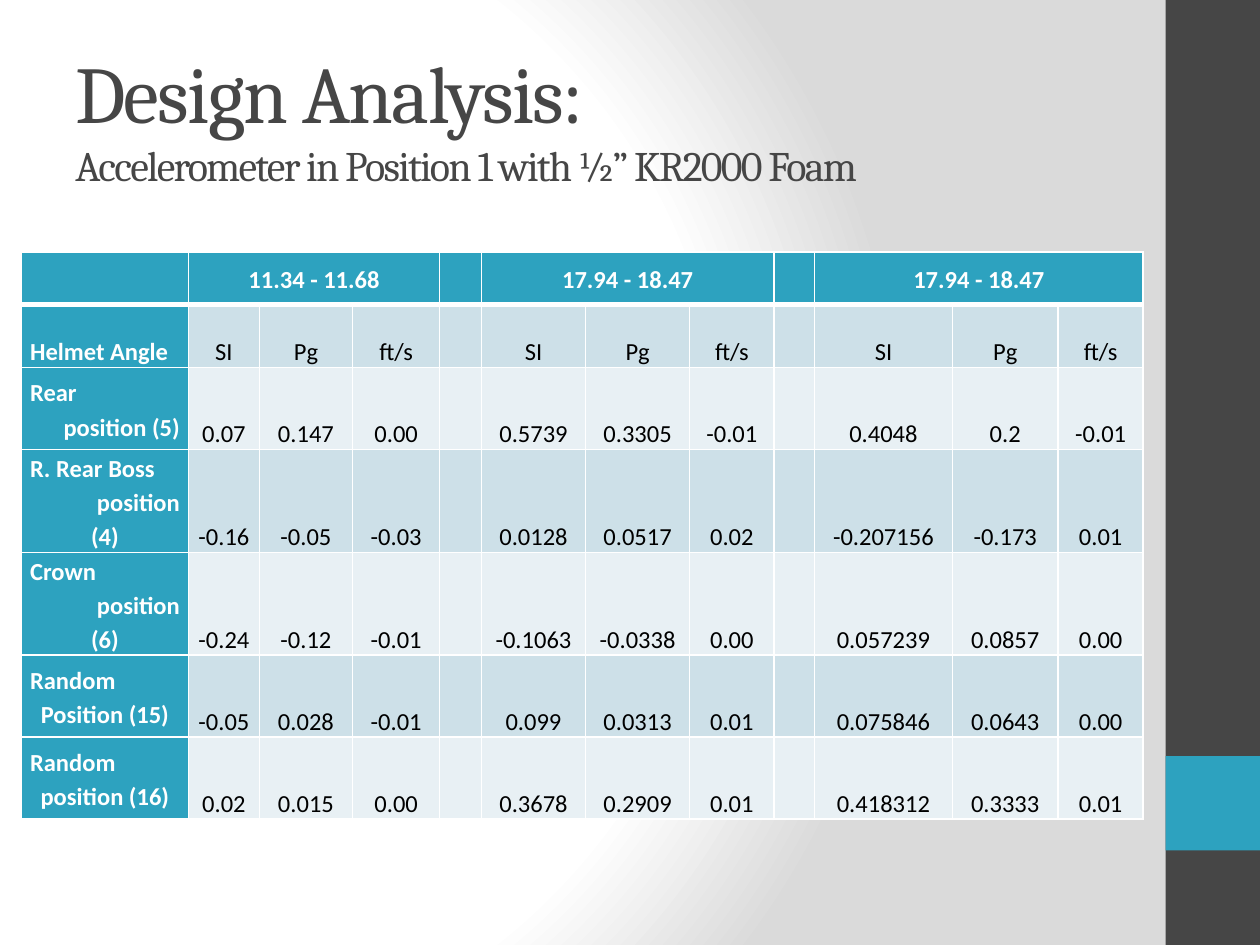
"""Build the accelerometer design analysis slide with its results table."""
from pptx import Presentation
from pptx.dml.color import RGBColor
from pptx.enum.shapes import MSO_SHAPE as Shape
from pptx.enum.text import MSO_ANCHOR as Anchor, PP_ALIGN as Align
from pptx.oxml import parse_xml
from pptx.oxml.ns import nsdecls
from pptx.util import Pt

CHARCOAL = RGBColor(0x46, 0x46, 0x46)
TEAL = RGBColor(0x2D, 0xA2, 0xBF)
BAND_DARK = RGBColor(0xCD, 0xE0, 0xE8)
BAND_LIGHT = RGBColor(0xE8, 0xF0, 0xF4)
WHITE = RGBColor(0xFF, 0xFF, 0xFF)
BLACK = RGBColor(0, 0, 0)
GREY = RGBColor(0xDA, 0xDA, 0xDA)


def write(para, text, font="Calibri", size=14, color=BLACK, bold=False,
          align=Align.LEFT, line=1.0, spacing=0):
    span = para.add_run()
    span.text = text
    span.font.name = font
    span.font.size = Pt(size)
    span.font.color.rgb = color
    span.font.bold = bold
    if spacing:
        span.font._element.set("spc", str(spacing))
    para.alignment = align
    para.line_spacing = line


def style_cell(cell, fill, top=1, bottom=1):
    cell.fill.solid()
    cell.fill.fore_color.rgb = fill
    cell.margin_left = cell.margin_right = Pt(5)
    cell.margin_top = cell.margin_bottom = 0
    properties = cell._tc.get_or_add_tcPr()
    edges = {"lnL": 1, "lnR": 1, "lnT": top, "lnB": bottom}
    for index, (edge, width) in enumerate(edges.items()):
        properties.insert(index, parse_xml(
            f'<a:{edge} {nsdecls("a")} w="{Pt(width)}"><a:solidFill>'
            f'<a:srgbClr val="{WHITE}"/></a:solidFill></a:{edge}>'))


deck = Presentation()
deck.slide_width, deck.slide_height = Pt(720), Pt(540)
page = deck.slides.add_slide(deck.slide_layouts[6])

stops = "".join(
    f'<a:gs pos="{position * 1000}"><a:srgbClr val="{color}"/></a:gs>'
    for position, color in ((0, WHITE), (75, WHITE), (100, GREY)))
page.element.cSld.insert(0, parse_xml(
    f'<p:bg {nsdecls("p", "a")}><p:bgPr><a:gradFill rotWithShape="1">'
    f'<a:gsLst>{stops}</a:gsLst><a:path path="circle">'
    '<a:fillToRect l="20000" t="50000" r="100000" b="50000"/></a:path>'
    '</a:gradFill><a:effectLst/></p:bgPr></p:bg>'))

for top, height, color in ((0, 540, CHARCOAL), (432, 54, TEAL)):
    bar = page.shapes.add_shape(Shape.RECTANGLE, Pt(666), Pt(top), Pt(54), Pt(height))
    bar.shadow.inherit = False
    bar.fill.solid()
    bar.fill.fore_color.rgb = color
    bar.line.fill.background()

title_box = page.shapes.add_textbox(Pt(36), Pt(24.5), Pt(600), Pt(100))
title = title_box.text_frame
title.word_wrap = True
title.vertical_anchor = Anchor.TOP
title.margin_top = title.margin_bottom = 0
heading = title.paragraphs[0]
write(heading, "Design Analysis:", font="Cambria", size=46, color=CHARCOAL, spacing=-100)
heading.add_line_break()
write(heading, "Accelerometer in Position 1 with ½” KR2000 Foam",
      font="Cambria", size=24, color=CHARCOAL, spacing=-100)

GROUP_STARTS = (1, 5, 9)
SPEEDS = ("11.34 - 11.68", "17.94 - 18.47", "17.94 - 18.47")
LEFT, CENTER, RIGHT = Align.LEFT, Align.CENTER, Align.RIGHT
ROWS = [
    ([("Helmet Angle", LEFT)], ["SI Pg ft/s"] * 3),
    ([("Rear", LEFT), ("position (5)", RIGHT)],
     ["0.07 0.147 0.00", "0.5739 0.3305 -0.01", "0.4048 0.2 -0.01"]),
    ([("R. Rear Boss", LEFT), ("position", RIGHT), ("(4)", CENTER)],
     ["-0.16 -0.05 -0.03", "0.0128 0.0517 0.02", "-0.207156 -0.173 0.01"]),
    ([("Crown", LEFT), ("position", RIGHT), ("(6)", CENTER)],
     ["-0.24 -0.12 -0.01", "-0.1063 -0.0338 0.00", "0.057239 0.0857 0.00"]),
    ([("Random", LEFT), ("Position (15)", CENTER)],
     ["-0.05 0.028 -0.01", "0.099 0.0313 0.01", "0.075846 0.0643 0.00"]),
    ([("Random", LEFT), ("position (16)", CENTER)],
     ["0.02 0.015 0.00", "0.3678 0.2909 0.01", "0.418312 0.3333 0.01"]),
]
WIDTHS = (95.6, 40.4, 53.4, 49.7, 23.9, 59.5, 59.5, 48.2, 23.2, 78.7, 60.5, 48.6)
HEIGHTS = (30, 36, 46.8, 58.8, 58.8, 46.8, 46.8)

frame = page.shapes.add_table(len(HEIGHTS), len(WIDTHS), Pt(12.2), Pt(144),
                              Pt(sum(WIDTHS)), Pt(sum(HEIGHTS)))
table = frame.table
table.first_row = table.horz_banding = False
for column, width in zip(table.columns, WIDTHS):
    column.width = Pt(width)
for row, height in zip(table.rows, HEIGHTS):
    row.height = Pt(height)

for column in range(len(WIDTHS)):
    style_cell(table.cell(0, column), TEAL, bottom=3)
for start, speed in zip(GROUP_STARTS, SPEEDS):
    cell = table.cell(0, start)
    cell.merge(table.cell(0, start + 2))
    cell.vertical_anchor = Anchor.MIDDLE
    write(cell.text_frame.paragraphs[0], speed, color=WHITE, bold=True,
          align=CENTER, line=1.15)

for row, (label, groups) in enumerate(ROWS, start=1):
    band = BAND_DARK if row % 2 else BAND_LIGHT
    for column in range(len(WIDTHS)):
        style_cell(table.cell(row, column), band if column else TEAL,
                   top=3 if row == 1 else 1)
    label_cell = table.cell(row, 0)
    label_cell.vertical_anchor = Anchor.BOTTOM if row == 1 else Anchor.MIDDLE
    for index, (text, align) in enumerate(label):
        label_frame = label_cell.text_frame
        para = label_frame.add_paragraph() if index else label_frame.paragraphs[0]
        write(para, text, color=WHITE, bold=True, align=align, line=1.15)
    for start, group in zip(GROUP_STARTS, groups):
        for column, value in enumerate(group.split(), start=start):
            cell = table.cell(row, column)
            cell.vertical_anchor = Anchor.BOTTOM
            write(cell.text_frame.paragraphs[0], value, align=CENTER, line=1.15)

deck.save("out.pptx")
